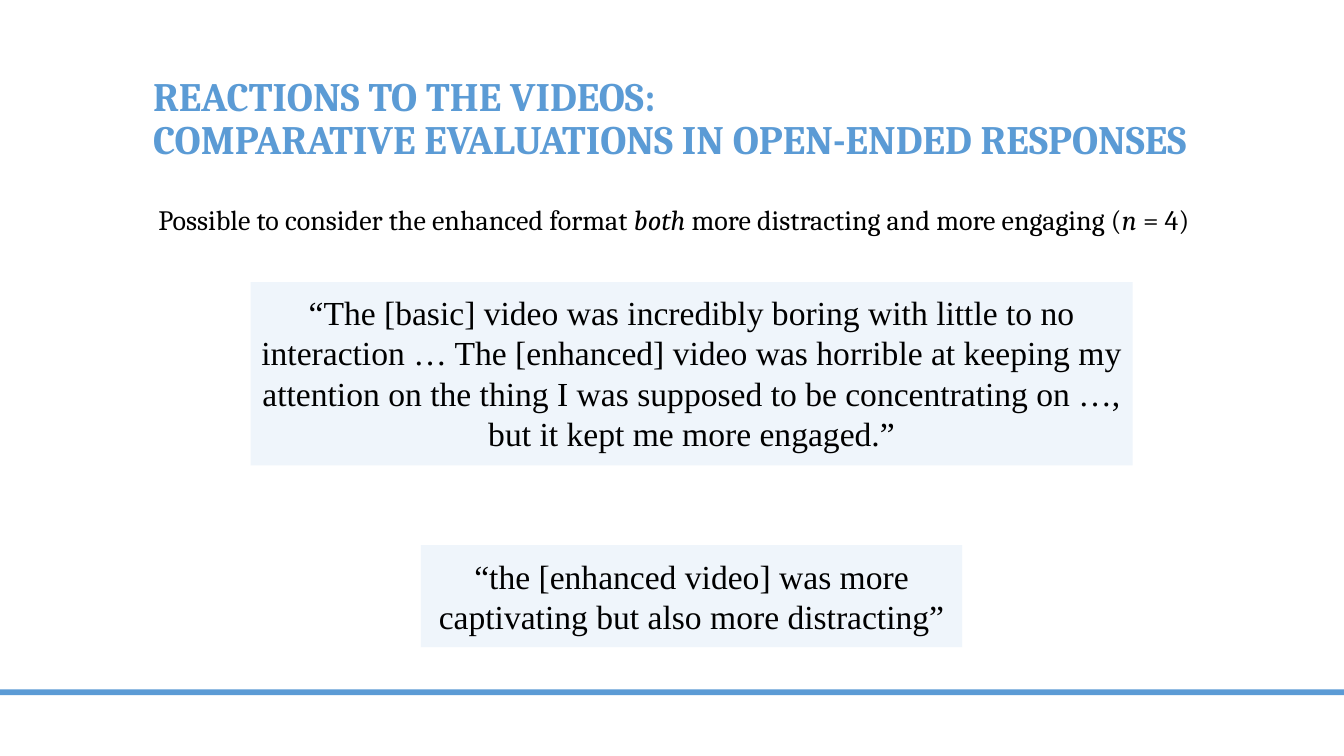
from dataclasses import dataclass

from pptx import Presentation
from pptx.dml.color import RGBColor
from pptx.enum.shapes import MSO_SHAPE as Shape
from pptx.enum.text import MSO_ANCHOR as Anchor, PP_ALIGN as Align
from pptx.util import Cm, Pt


@dataclass(frozen=True)
class Theme:
    accent: RGBColor = RGBColor(0x5B, 0x9B, 0xD5)
    panel: RGBColor = RGBColor(0xEF, 0xF5, 0xFB)
    ink: RGBColor = RGBColor(0, 0, 0)
    heading_font: str = "Cambria"
    quote_font: str = "Times New Roman"
    title_size: float = 28.8
    body_size: float = 20
    quote_size: float = 24


THEME = Theme()
PAGE_WIDTH, PAGE_HEIGHT = 33.87, 19.05
TEXT_LEFT = 3.61
QUOTE_CENTER = 17.43
TITLE = "REACTIONS TO THE VIDEOS:\vCOMPARATIVE EVALUATIONS IN OPEN-ENDED RESPONSES"
FINDING = [
    ("Possible to consider the enhanced format ", False),
    ("both", True),
    (" more distracting and more engaging (", False),
    ("n", True),
    (" = 4)", False),
]
QUOTES = [
    (7.11, 22.23, 4.62, Anchor.TOP,
     "“The [basic] video was incredibly boring with little to no interaction … "
     "The [enhanced] video was horrible at keeping my attention on the thing I was "
     "supposed to be concentrating on …, but it kept me more engaged.”"),
    (13.74, 13.64, 2.57, Anchor.MIDDLE,
     "“the [enhanced video] was more captivating but also more distracting”"),
]


def style(para, name, size, color, bold=False):
    para.font.name = name
    para.font.size = Pt(size)
    para.font.color.rgb = color
    para.font.bold = bold


def add_panel(page, left, top, width, height, color):
    panel = page.shapes.add_shape(Shape.RECTANGLE, Cm(left), Cm(top), Cm(width), Cm(height))
    panel.shadow.inherit = False
    panel.fill.solid()
    panel.fill.fore_color.rgb = color
    panel.line.fill.background()
    return panel


def add_text(page, left, top, width, height, anchor):
    box = page.shapes.add_textbox(Cm(left), Cm(top), Cm(width), Cm(height))
    frame = box.text_frame
    frame.word_wrap = True
    frame.vertical_anchor = anchor
    para = frame.paragraphs[0]
    para.line_spacing = 0.9
    return frame, para


def add_title(page, left, top, width, height):
    frame, para = add_text(page, left, top, width, height, Anchor.BOTTOM)
    para.text = TITLE
    style(para, THEME.heading_font, THEME.title_size, THEME.accent, bold=True)


def add_finding(page, left, top, width, height):
    frame, para = add_text(page, left, top, width, height, Anchor.TOP)
    frame.margin_left = Cm(0.38)
    for words, italic in FINDING:
        span = para.add_run()
        span.text = words
        span.font.italic = italic
    style(para, THEME.heading_font, THEME.body_size, THEME.ink)


def add_quote(page, left, top, width, height, anchor, words):
    frame = add_panel(page, left, top, width, height, THEME.panel).text_frame
    frame.word_wrap = True
    frame.vertical_anchor = anchor
    frame.margin_left = frame.margin_right = Cm(0.25)
    frame.margin_top = frame.margin_bottom = Cm(0.25)
    para = frame.paragraphs[0]
    para.text = words
    para.alignment = Align.CENTER
    style(para, THEME.quote_font, THEME.quote_size, THEME.ink)


def main():
    deck = Presentation()
    deck.slide_width, deck.slide_height = Cm(PAGE_WIDTH), Cm(PAGE_HEIGHT)
    page = deck.slides.add_slide(deck.slide_layouts[6])
    add_panel(page, 0, 17.37, PAGE_WIDTH, 0.15, THEME.accent)
    add_title(page, TEXT_LEFT, 1.07, 27.66, 3.18)
    add_finding(page, TEXT_LEFT, 5.08, 28.02, 1.3)
    for top, width, height, anchor, words in QUOTES:
        add_quote(page, QUOTE_CENTER - width / 2, top, width, height, anchor, words)
    deck.save("out.pptx")


if __name__ == "__main__":
    main()
